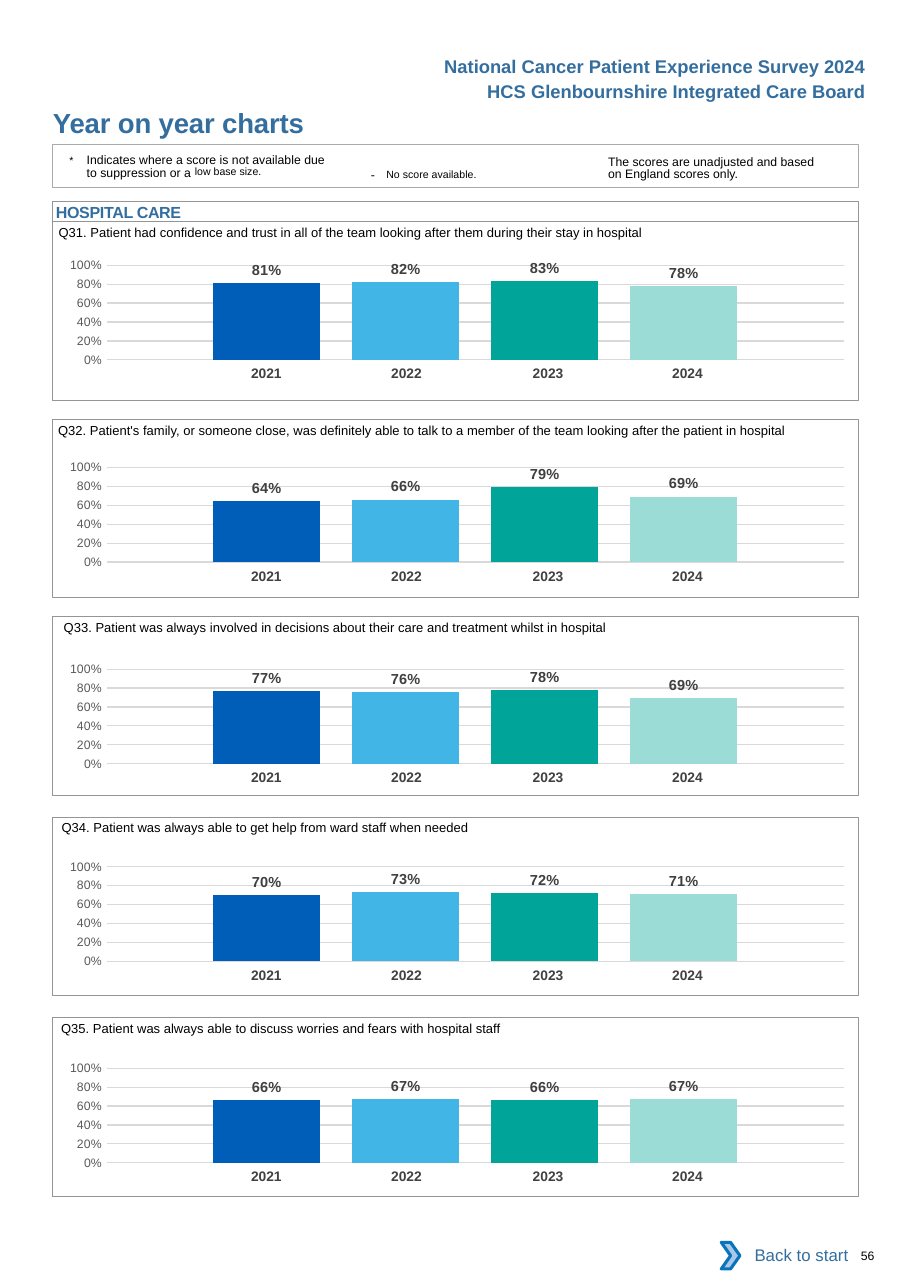
from lxml import etree
from pptx import Presentation
from pptx.chart.data import CategoryChartData
from pptx.dml.color import RGBColor
from pptx.enum.chart import XL_CHART_TYPE, XL_LABEL_POSITION, XL_TICK_MARK
from pptx.enum.shapes import MSO_SHAPE
from pptx.enum.text import MSO_ANCHOR, PP_ALIGN
from pptx.oxml.ns import qn
from pptx.util import Cm, Pt

LEFT, CENTER, RIGHT = PP_ALIGN.LEFT, PP_ALIGN.CENTER, PP_ALIGN.RIGHT
TOP, MIDDLE = MSO_ANCHOR.TOP, MSO_ANCHOR.MIDDLE
RECTANGLE, CHEVRON = MSO_SHAPE.RECTANGLE, MSO_SHAPE.CHEVRON
COLUMNS = XL_CHART_TYPE.COLUMN_CLUSTERED
OUTSIDE_END = XL_LABEL_POSITION.OUTSIDE_END
NO_TICK = XL_TICK_MARK.NONE

BLACK = RGBColor(0, 0, 0)
HEADING_BLUE = RGBColor(0x33, 0x6E, 0x9F)
PANEL_GREY = RGBColor(0x93, 0x95, 0x98)
NOTE_GREY = RGBColor(0xA9, 0xAA, 0xAD)
YEAR_GREY = RGBColor(0x41, 0x40, 0x42)
LABEL_GREY = RGBColor(0x40, 0x40, 0x40)
AXIS_GREY = RGBColor(0x59, 0x59, 0x59)
GRID_GREY = RGBColor(0xD9, 0xD9, 0xD9)
CHEVRON_FILL = RGBColor(0xA8, 0xC7, 0xE9)
CHEVRON_LINE = RGBColor(0x0A, 0x74, 0xBB)
YEAR_COLOURS = [RGBColor(0x00, 0x5E, 0xB8), RGBColor(0x41, 0xB6, 0xE6),
                RGBColor(0x00, 0xA4, 0x99), RGBColor(0x9C, 0xDC, 0xD7)]

FONT = "Arial"
NO_TABLE_STYLE = "{2D5ABB26-0587-4C30-8999-92F81FD0307C}"

HEADERS = [("National Cancer Patient Experience Survey 2024", 1.27),
           ("HCS Glenbournshire Integrated Care Board", 1.86)]
TITLE = [("Year on year charts", {"spacing": -0.1})]
SECTION = [("HOSPITAL CARE", {"spacing": -0.2})]
SUPPRESSED_NOTE = [
    ("*\t", {"size": 12, "baseline": 3}),
    ("Indicates where a score is not available due to suppression or a ", {}),
    ("low base size.", {"size": 12, "baseline": 7}),
]
NO_SCORE_NOTE = [("- ", {"spacing": 2.6}),
                 ("No score available.", {"size": 12, "baseline": 3})]
UNADJUSTED_NOTE = "The scores are unadjusted and based on England scores only."

YEARS = ["2021", "2022", "2023", "2024"]
YEAR_WIDTHS = [3.23, 3.23, 3.4, 3.23]
YEAR_RIGHT_MARGINS = [0, 0, 0.1, 0.3]

QUESTIONS = [
    ("Q31. Patient had confidence and trust in all of the team looking after them "
     "during their stay in hospital", [0.81, 0.82, 0.83, 0.78], 5.11, 5.64, 1.35),
    ("Q32. Patient's family, or someone close, was definitely able to talk to a member "
     "of the team looking after the patient in hospital",
     [0.64, 0.66, 0.79, 0.69], 9.67, 10.3, 1.34),
    ("Q33. Patient was always involved in decisions about their care and treatment "
     "whilst in hospital", [0.77, 0.76, 0.78, 0.69], 14.22, 14.95, 1.47),
    ("Q34. Patient was always able to get help from ward staff when needed",
     [0.7, 0.73, 0.72, 0.71], 18.84, 19.5, 1.42),
    ("Q35. Patient was always able to discuss worries and fears with hospital staff",
     [0.66, 0.67, 0.66, 0.67], 23.46, 24.15, 1.41),
]

PANEL_LEFT, PANEL_WIDTH, PANEL_HEIGHT = 1.21, 18.58, 4.11
CHART_LEFT, CHART_HEIGHT = 0.99, 3.28
YEARS_LEFT, YEARS_OFFSET, YEARS_HEIGHT = 4.4, 2.68, 0.69
QUESTION_OFFSET = 0.06
PLOT_AREA = {"x": 0.079, "y": 0.145, "w": 0.915, "h": 0.666}


def format_font(font, size, color, bold=False):
    font.name, font.size, font.bold = FONT, Pt(size), bold
    font.color.rgb = color


def write(frame, text, size=8, color=BLACK, bold=False, align=LEFT, anchor=TOP,
          line_points=None, hanging=0):
    frame.word_wrap = True
    frame.vertical_anchor = anchor
    paragraph = frame.paragraphs[0]
    paragraph.alignment = align
    if line_points:
        paragraph.line_spacing = Pt(line_points)
    if hanging:
        properties = paragraph._p.get_or_add_pPr()
        properties.set("marL", str(Cm(hanging)))
        properties.set("indent", str(-Cm(hanging)))
    for words, changes in [(text, {})] if isinstance(text, str) else text:
        run = paragraph.add_run()
        run.text = words
        format_font(run.font, changes.get("size", size), color, bold)
        properties = run._r.get_or_add_rPr()
        if "baseline" in changes:
            properties.set("baseline", str(changes["baseline"] * 1000))
        if "spacing" in changes:
            properties.set("spc", str(round(changes["spacing"] * 100)))


def add_text(slide, text, left, top, width, height, **text_format):
    frame = slide.shapes.add_textbox(Cm(left), Cm(top), Cm(width), Cm(height)).text_frame
    frame.margin_left = frame.margin_right = frame.margin_top = frame.margin_bottom = 0
    write(frame, text, **text_format)


def add_outline(slide, kind, left, top, width, height, line=PANEL_GREY, points=0.5,
                fill=None):
    shape = slide.shapes.add_shape(kind, Cm(left), Cm(top), Cm(width), Cm(height))
    shape.shadow.inherit = False
    shape.line.color.rgb, shape.line.width = line, Pt(points)
    if fill is None:
        shape.fill.background()
    else:
        shape.fill.solid()
        shape.fill.fore_color.rgb = fill


def set_plot_area(chart):
    plot_area = chart.element.find(".//" + qn("c:plotArea"))
    for old_layout in plot_area.findall(qn("c:layout")):
        plot_area.remove(old_layout)
    layout = etree.Element(qn("c:layout"))
    manual = etree.SubElement(layout, qn("c:manualLayout"))
    settings = [("layoutTarget", "inner"), ("xMode", "edge"), ("yMode", "edge")]
    for tag, value in settings + list(PLOT_AREA.items()):
        etree.SubElement(manual, qn("c:" + tag)).set("val", str(value))
    plot_area.insert(0, layout)


def add_score_chart(slide, scores, top):
    data = CategoryChartData(number_format="0%")
    data.categories = ["1"]
    for year, score in zip(YEARS, scores):
        data.add_series(year, [score])
    chart = slide.shapes.add_chart(COLUMNS, Cm(CHART_LEFT), Cm(top), Cm(PANEL_WIDTH),
                                   Cm(CHART_HEIGHT), data).chart
    chart.has_legend = chart.has_title = False
    chart.font.name, chart.font.size = "Calibri", Pt(10)
    chart.category_axis.visible = False
    axis = chart.value_axis
    axis.minimum_scale, axis.maximum_scale, axis.major_unit = 0, 1, 0.2
    axis.major_tick_mark = axis.minor_tick_mark = NO_TICK
    axis.format.line.fill.background()
    axis.major_gridlines.format.line.color.rgb = GRID_GREY
    axis.major_gridlines.format.line.width = Pt(0.75)
    axis.tick_labels.number_format = "0%"
    axis.tick_labels.number_format_is_linked = False
    format_font(axis.tick_labels.font, 8, AXIS_GREY)
    plot = chart.plots[0]
    plot.gap_width, plot.overlap, plot.vary_by_categories = 200, -30, False
    for series, color in zip(plot.series, YEAR_COLOURS):
        series.format.fill.solid()
        series.format.fill.fore_color.rgb = color
        labels = series.data_labels
        labels.show_value, labels.position = True, OUTSIDE_END
        labels.number_format, labels.number_format_is_linked = "0%", False
        format_font(labels.font, 9.5, LABEL_GREY, bold=True)
    set_plot_area(chart)


def add_years(slide, top):
    frame = slide.shapes.add_table(1, len(YEARS), Cm(YEARS_LEFT), Cm(top),
                                   Cm(sum(YEAR_WIDTHS)), Cm(YEARS_HEIGHT))
    table = frame.table
    table.first_row = table.horz_banding = False
    table._tbl.tblPr.find(qn("a:tableStyleId")).text = NO_TABLE_STYLE
    for index, year in enumerate(YEARS):
        table.columns[index].width = Cm(YEAR_WIDTHS[index])
        cell = table.cell(0, index)
        cell.fill.background()
        cell.margin_left, cell.margin_right = Cm(0.25), Cm(YEAR_RIGHT_MARGINS[index])
        write(cell.text_frame, year, size=9, color=YEAR_GREY, bold=True, align=CENTER)


def main():
    presentation = Presentation()
    presentation.slide_width, presentation.slide_height = Cm(20.98), Cm(29.69)
    slide = presentation.slides.add_slide(presentation.slide_layouts[6])

    for header, top in HEADERS:
        add_text(slide, header, 9.7, top, 10.26, 0.5, size=12,
                 color=HEADING_BLUE, bold=True, align=RIGHT)
    add_text(slide, TITLE, 1.22, 2.44, 11.43, 0.76, size=18,
             color=HEADING_BLUE, bold=True)

    add_outline(slide, RECTANGLE, PANEL_LEFT, 3.33, PANEL_WIDTH, 0.99, NOTE_GREY, 0.75)
    add_text(slide, SUPPRESSED_NOTE, 1.6, 3.6, 6, 0.6, line_points=8.1, hanging=0.4)
    add_text(slide, NO_SCORE_NOTE, 8.55, 3.71, 4.2, 0.5)
    add_text(slide, UNADJUSTED_NOTE, 14.02, 3.6, 5.1, 0.6, line_points=8.1)

    add_outline(slide, RECTANGLE, PANEL_LEFT, 4.65, PANEL_WIDTH, 0.46)
    add_text(slide, SECTION, 1.29, 4.67, 10, 0.44, size=10.5,
             color=HEADING_BLUE, bold=True)

    for question, scores, panel_top, chart_top, question_left in QUESTIONS:
        add_score_chart(slide, scores, chart_top)
        add_years(slide, chart_top + YEARS_OFFSET)
        add_outline(slide, RECTANGLE, PANEL_LEFT, panel_top, PANEL_WIDTH, PANEL_HEIGHT)
        add_text(slide, question, question_left, panel_top + QUESTION_OFFSET, 18.2, 0.4,
                 size=8.5)

    add_outline(slide, CHEVRON, 16.63, 28.64, 0.43, 0.61, CHEVRON_LINE, 2, CHEVRON_FILL)
    add_text(slide, "Back to start", 17.07, 28.4, 2.49, 1.07, size=11,
             color=HEADING_BLUE, align=RIGHT, anchor=MIDDLE)
    add_text(slide, "56", 19.85, 28.77, 0.8, 0.33)
    presentation.save("out.pptx")


if __name__ == "__main__":
    main()
